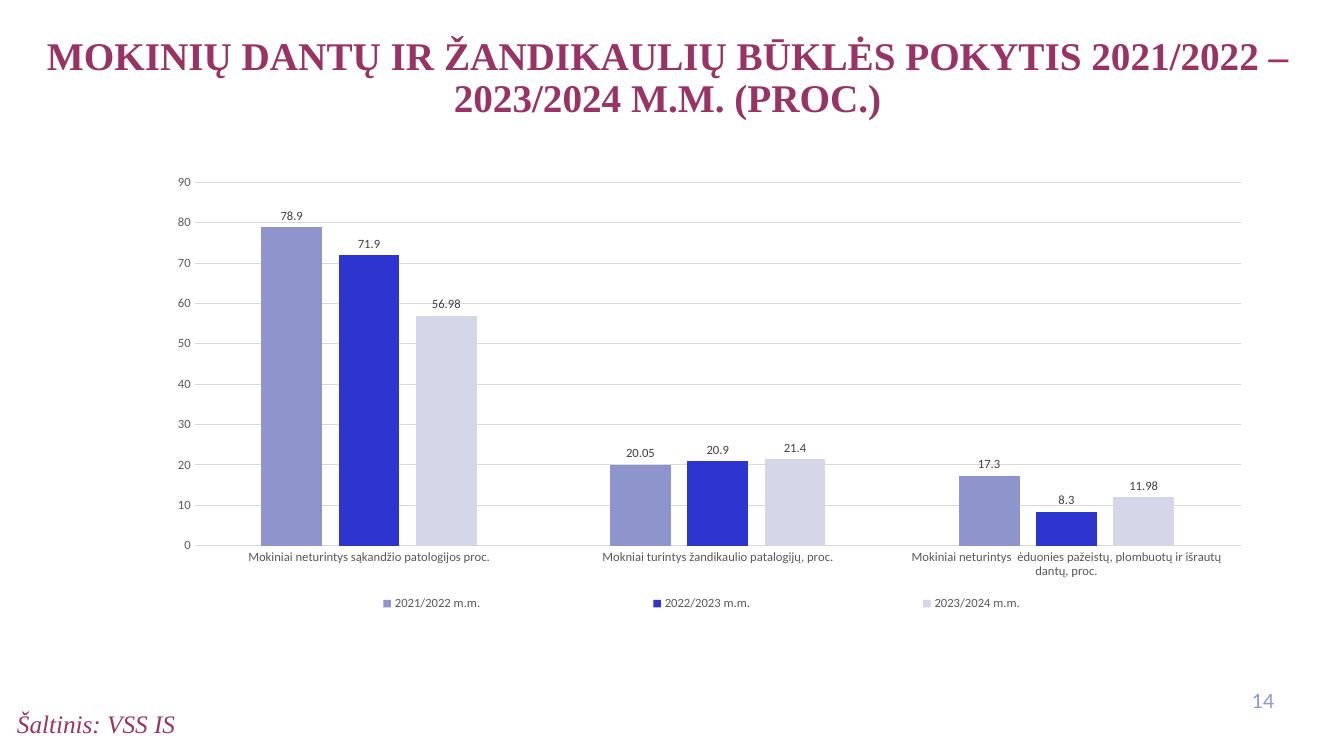
from lxml import etree
from pptx import Presentation
from pptx.chart.data import CategoryChartData
from pptx.dml.color import RGBColor
from pptx.enum.chart import XL_CHART_TYPE, XL_LABEL_POSITION, XL_LEGEND_POSITION, XL_TICK_MARK
from pptx.enum.text import MSO_ANCHOR, PP_ALIGN
from pptx.oxml.ns import qn
from pptx.util import Inches, Pt

PLUM = RGBColor(0x99, 0x33, 0x66)
LAVENDER = RGBColor(0x8E, 0x96, 0xCD)
GRID_GRAY = RGBColor(0xD9, 0xD9, 0xD9)
AXIS_GRAY = RGBColor(0x59, 0x59, 0x59)
LABEL_GRAY = RGBColor(0x40, 0x40, 0x40)
BLACK = RGBColor(0, 0, 0)

CATEGORIES = [
    "Mokiniai neturintys sąkandžio patologijos proc.",
    "Mokniai turintys žandikaulio patalogijų, proc.",
    "Mokiniai neturintys  ėduonies pažeistų, plombuotų ir išrautų dantų, proc.",
]
SCHOOL_YEARS = [
    ("2021/2022 m.m.", (78.9, 20.05, 17.3), RGBColor(0x8D, 0x95, 0xCC)),
    ("2022/2023 m.m.", (71.9, 20.9, 8.3), RGBColor(0x2E, 0x34, 0xD0)),
    ("2023/2024 m.m.", (56.98, 21.4, 11.98), RGBColor(0xD5, 0xD7, 0xE8)),
]


def style_font(font, size, color, name="Calibri"):
    font.size = Pt(size)
    font.name = name
    font.color.rgb = color


def add_text(page, box, text, size, color, name, align=PP_ALIGN.LEFT, bold=False, italic=False, spacing=1.0):
    frame = page.shapes.add_textbox(*map(Inches, box)).text_frame
    frame.word_wrap = True
    frame.vertical_anchor = MSO_ANCHOR.TOP
    para = frame.paragraphs[0]
    para.alignment = align
    para.line_spacing = spacing
    span = para.add_run()
    span.text = text
    style_font(span.font, size, color, name)
    span.font.bold = bold
    span.font.italic = italic


def place_inside(element, position, left, top, width, height, inner=False):
    for old in element.findall(qn("c:layout")):
        element.remove(old)
    layout = etree.Element(qn("c:layout"))
    manual = etree.SubElement(layout, qn("c:manualLayout"))
    settings = [("layoutTarget", "inner")] if inner else []
    settings += [("xMode", "edge"), ("yMode", "edge"), ("x", left), ("y", top), ("w", width), ("h", height)]
    for tag, value in settings:
        etree.SubElement(manual, qn(f"c:{tag}")).set("val", str(value))
    element.insert(position, layout)


def style_axes(chart):
    for axis in (chart.category_axis, chart.value_axis):
        axis.major_tick_mark = XL_TICK_MARK.NONE
        axis.minor_tick_mark = XL_TICK_MARK.NONE
        style_font(axis.tick_labels.font, 9, AXIS_GRAY)
    values = chart.value_axis
    values.minimum_scale, values.maximum_scale, values.major_unit = 0, 90, 10
    values.has_major_gridlines = True
    values.format.line.fill.background()
    for line in (chart.category_axis.format.line, values.major_gridlines.format.line):
        line.color.rgb = GRID_GRAY
        line.width = Pt(0.75)


def style_bars(plot):
    plot.gap_width = 219
    plot.overlap = -27
    plot.vary_by_categories = False
    for series, (_, _, color) in zip(plot.series, SCHOOL_YEARS):
        series.format.fill.solid()
        series.format.fill.fore_color.rgb = color
        series.invert_if_negative = False
        labels = series.data_labels
        labels.show_value = True
        labels.position = XL_LABEL_POSITION.OUTSIDE_END
        style_font(labels.font, 9, LABEL_GRAY)


def add_teeth_chart(page, box):
    data = CategoryChartData()
    data.categories = CATEGORIES
    for name, values, _ in SCHOOL_YEARS:
        data.add_series(name, values)
    chart = page.shapes.add_chart(XL_CHART_TYPE.COLUMN_CLUSTERED, *map(Inches, box), data).chart
    style_font(chart.font, 10, BLACK)
    chart.has_title = False
    style_axes(chart)
    style_bars(chart.plots[0])
    chart.has_legend = True
    legend = chart.legend
    legend.position = XL_LEGEND_POSITION.BOTTOM
    legend.include_in_layout = False
    style_font(legend.font, 9, AXIS_GRAY)
    plot_area = chart._chartSpace.find(f".//{qn('c:plotArea')}")
    place_inside(plot_area, 0, 0.042, 0.107, 0.945, 0.701, inner=True)
    place_inside(legend._element, 1, 0.06, 0.89, 0.88, 0.06)


def add_footer(page, box):
    left, top, width, height = box
    add_text(page, (left, top + 0.19, 6.3, 0.38), "Šaltinis: VSS IS", 18, PLUM, "Times New Roman", italic=True)
    add_text(page, (left + width - 0.52, top, 0.52, 0.4), "14", 14, LAVENDER, "Lato", PP_ALIGN.RIGHT)


def main():
    deck = Presentation()
    deck.slide_width = Inches(13.33)
    deck.slide_height = Inches(7.5)
    page = deck.slides.add_slide(deck.slide_layouts[6])
    add_text(
        page, (-0.09, 0.31, 13.42, 1.19),
        "MOKINIŲ DANTŲ IR ŽANDIKAULIŲ BŪKLĖS POKYTIS 2021/2022 – 2023/2024 M.M. (PROC.)",
        28, PLUM, "Times New Roman", PP_ALIGN.CENTER, bold=True, spacing=0.9,
    )
    add_teeth_chart(page, (1.47, 1.26, 10.98, 5.14))
    add_footer(page, (0.07, 6.79, 12.67, 0.57))
    deck.save("out.pptx")


if __name__ == "__main__":
    main()
